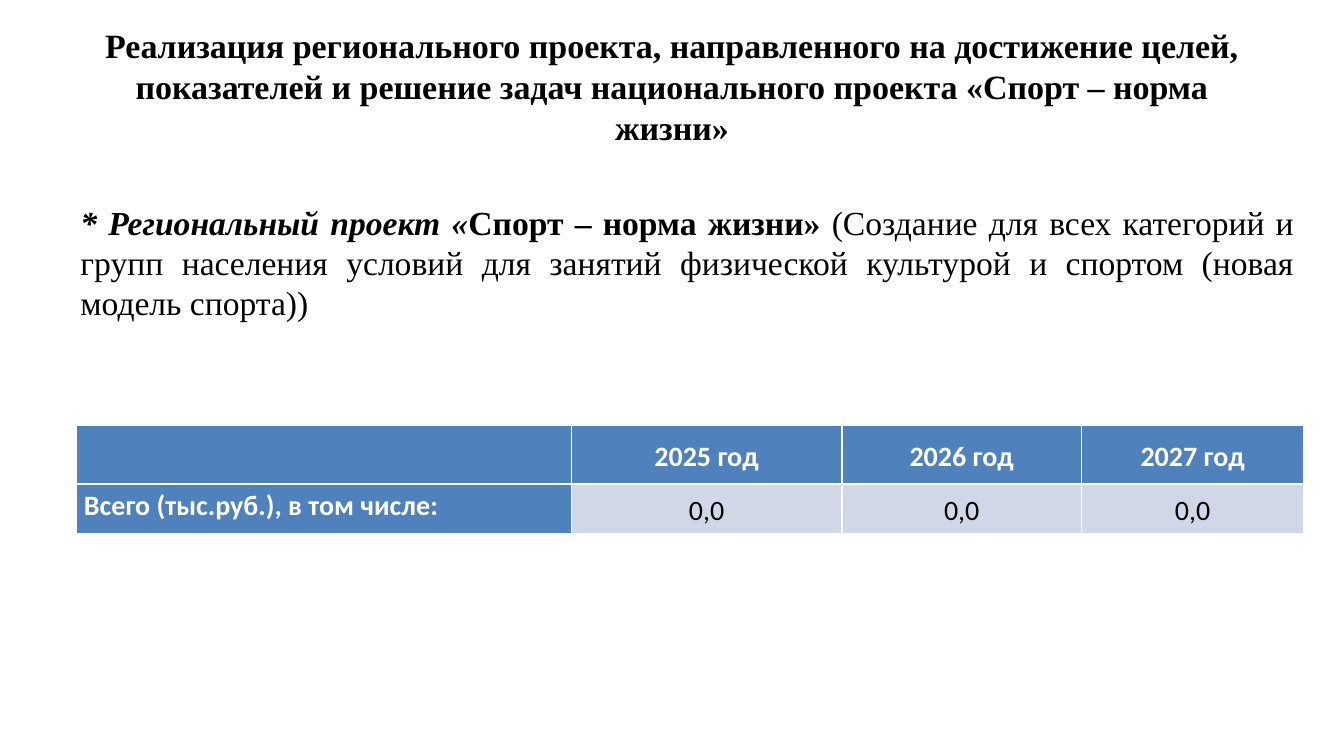
from lxml.etree import SubElement
from pptx import Presentation
from pptx.dml.color import RGBColor
from pptx.enum.text import MSO_ANCHOR, MSO_AUTO_SIZE, PP_ALIGN
from pptx.oxml.ns import qn
from pptx.util import Emu, Pt

PX = 9525  # 96 px to the inch
COLORS = {
    "text": "000000",
    "header": "4F81BD",
    "header_text": "FFFFFF",
    "value": "D0D8E8",
}
SERIF = "Times New Roman"
SANS = "Calibri"

TITLE = (
    "Реализация регионального проекта, направленного на достижение целей, "
    "показателей и решение задач национального проекта «Спорт – норма жизни»"
)
# Text, bold, italic
PROJECT = [
    ("* Региональный проект «", True, True),
    ("Спорт – норма жизни»", True, False),
    (" (Создание для всех категорий и групп населения условий для занятий "
     "физической культурой и спортом (новая модель спорта))", False, False),
]
FUNDING = [
    ["", "2025 год", "2026 год", "2027 год"],
    ["Всего (тыс.руб.), в том числе:", "0,0", "0,0", "0,0"],
]
COLUMN_WIDTHS = [471, 258, 228, 212]
ROW_HEIGHTS = [56, 47]


def px(length):
    return Emu(length * PX)


def color(name):
    return RGBColor.from_string(COLORS[name])


def add_span(para, text, font, size, color_name, bold=False, italic=False):
    span = para.add_run()
    span.text = text
    span.font.name = font
    span.font.size = Pt(size)
    span.font.bold = bold
    span.font.italic = italic
    span.font.color.rgb = color(color_name)


def place_text(box, bounds, align, anchor):
    """Move a placeholder and return its first paragraph."""
    box.left, box.top, box.width, box.height = map(px, bounds)
    frame = box.text_frame
    frame.word_wrap = True
    frame.auto_size = MSO_AUTO_SIZE.NONE
    frame.vertical_anchor = anchor
    para = frame.paragraphs[0]
    para.alignment = align
    return para


def remove_bullet(para):
    properties = para._p.get_or_add_pPr()
    properties.set("marL", "0")
    properties.set("indent", "0")
    SubElement(properties, qn("a:buNone"))


def fill_cell(cell, text, is_header, is_label):
    cell.fill.solid()
    cell.fill.fore_color.rgb = color("header" if is_header else "value")
    cell.margin_left = cell.margin_right = px(7)
    cell.margin_top = cell.margin_bottom = 0
    cell.vertical_anchor = MSO_ANCHOR.TOP if is_label else MSO_ANCHOR.MIDDLE
    if not text:
        return
    para = cell.text_frame.paragraphs[0]
    para.alignment = PP_ALIGN.LEFT if is_label else PP_ALIGN.CENTER
    para.line_spacing = 1.15
    para.space_after = Pt(10)
    text_color = "header_text" if is_header else "text"
    add_span(para, text, SANS, 20, text_color, bold=is_header)


def add_funding_table(page, left, top):
    frame = page.shapes.add_table(
        len(FUNDING), len(COLUMN_WIDTHS), px(left), px(top),
        px(sum(COLUMN_WIDTHS)), px(sum(ROW_HEIGHTS)))
    table = frame.table
    table.first_col = True
    table.horz_banding = False
    for column, width in zip(table.columns, COLUMN_WIDTHS):
        column.width = px(width)
    for row, height in zip(table.rows, ROW_HEIGHTS):
        row.height = px(height)
    for r, texts in enumerate(FUNDING):
        for c, text in enumerate(texts):
            fill_cell(table.cell(r, c), text, r == 0 or c == 0, c == 0)


def main():
    deck = Presentation()
    deck.slide_width, deck.slide_height = px(1280), px(720)
    page = deck.slides.add_slide(deck.slide_layouts[1])

    # Heading
    para = place_text(page.shapes.title, (88, 38, 1104, 88),
                      PP_ALIGN.CENTER, MSO_ANCHOR.MIDDLE)
    add_span(para, TITLE, SERIF, 24.3, "text", bold=True)

    # Project description
    para = place_text(page.placeholders[1], (67, 187, 1175, 472),
                      PP_ALIGN.JUSTIFY, MSO_ANCHOR.TOP)
    remove_bullet(para)
    for text, bold, italic in PROJECT:
        add_span(para, text, SERIF, 24, "text", bold, italic)

    # Funding by year
    add_funding_table(page, 73, 405)

    deck.save("out.pptx")


if __name__ == "__main__":
    main()
